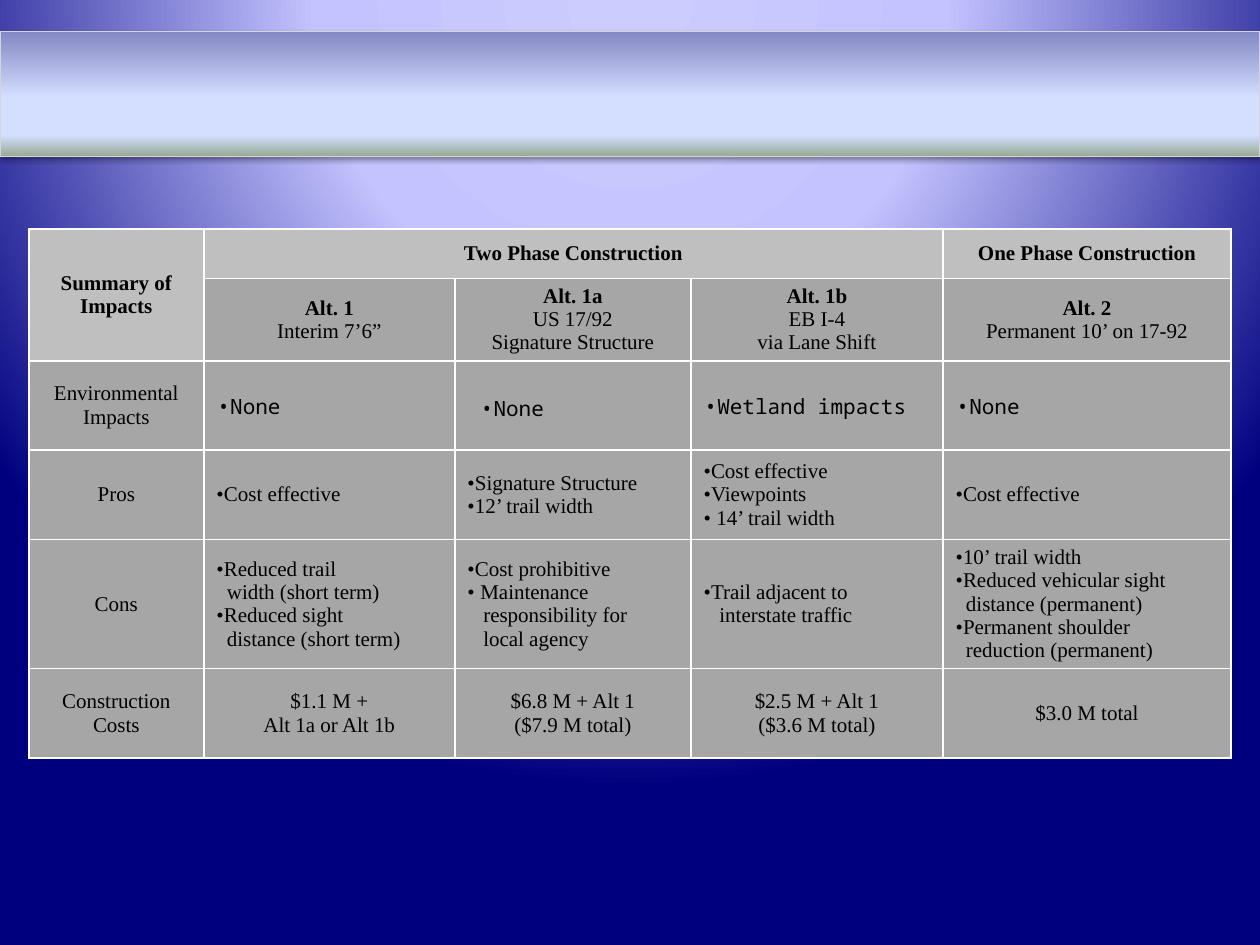
from dataclasses import dataclass
from pptx import Presentation as Deck
from pptx.dml.color import RGBColor as Rgb
from pptx.enum.shapes import MSO_SHAPE as Shape
from pptx.enum.text import MSO_ANCHOR as Anchor, PP_ALIGN as Align
from pptx.oxml import parse_xml as make
from pptx.oxml.ns import nsdecls, qn
from pptx.util import Cm, Pt

NS = nsdecls("a")


@dataclass(frozen=True)
class Theme:
    font: str = "Times New Roman"
    mono: str = "Noto Sans Mono"
    size: int = 12
    ink: str = "000000"
    head: str = "BFBFBF"
    body: str = "A6A6A6"
    grid: str = "FFFFFF"
    edge: str = "D5D5D5"
    back: tuple = ((0, "CCCCFF"), (40, "C3C3FF"), (100, "00007F"))
    band: tuple = ((0, "8488C4"), (53, "D4DEFF"), (83, "D4DEFF"), (100, "96AB94"))


class Page:
    def __init__(self, deck, theme):
        self.theme = theme
        self.slide = deck.slides.add_slide(deck.slide_layouts[6])

    def blend(self, root, stops, tail):
        marks = "".join(
            f'<a:gs pos="{at * 1000}"><a:srgbClr val="{tone}"/></a:gs>'
            for at, tone in stops)
        old = root.find(".//" + qn("a:gradFill"))
        new = make(f'<a:gradFill {NS} rotWithShape="1">'
                   f'<a:gsLst>{marks}</a:gsLst>{tail}</a:gradFill>')
        old.getparent().replace(old, new)

    def back(self):
        self.slide.background.fill.gradient()
        self.blend(self.slide.element, self.theme.back,
                   '<a:path path="circle"><a:fillToRect l="50000" t="-80000" '
                   'r="50000" b="180000"/></a:path>')

    def band(self, left, top, width, height):
        bar = self.slide.shapes.add_shape(
            Shape.RECTANGLE, Cm(left), Cm(top), Cm(width), Cm(height))
        bar.fill.gradient()
        self.blend(bar.element, self.theme.band,
                   '<a:lin ang="5400000" scaled="0"/>')
        bar.line.color.rgb = Rgb.from_string(self.theme.edge)
        bar.line.width = Pt(0.75)
        bar.shadow.inherit = False
        bar.element.spPr.find(qn("a:effectLst")).append(make(
            f'<a:outerShdw {NS} blurRad="{Pt(3.1)}" dist="{Pt(1.6)}" '
            'dir="5400000" rotWithShape="0"><a:srgbClr val="000000">'
            '<a:alpha val="38000"/></a:srgbClr></a:outerShdw>'))

    def indent(self, para, left, hang=0):
        props = para._p.get_or_add_pPr()
        props.set("marL", str(Cm(left)))
        props.set("indent", str(-Cm(hang)))
        return props

    def bullet(self, para, left, hang, font):
        props = self.indent(para, left, hang)
        props.append(make(f'<a:buFont {NS} typeface="{font}"/>'))
        props.append(make(f'<a:buChar {NS} char="•"/>'))

    def style(self, para, font, bold=False):
        for run in para.runs:
            run.font.name = font
            run.font.size = Pt(self.theme.size)
            run.font.bold = bold
            run.font.color.rgb = Rgb.from_string(self.theme.ink)

    def paint(self, cell, tone):
        cell.fill.solid()
        cell.fill.fore_color.rgb = Rgb.from_string(tone)
        props = cell._tc.get_or_add_tcPr()
        for spot, side in enumerate("LRTB"):
            props.insert(spot, make(
                f'<a:ln{side} {NS} w="{Pt(1)}"><a:solidFill>'
                f'<a:srgbClr val="{self.theme.grid}"/></a:solidFill></a:ln{side}>'))

    def label(self, cell, text, bold, pad, mono):
        cell.vertical_anchor = Anchor.MIDDLE
        cell.text_frame.text = text
        font = self.theme.mono if mono else self.theme.font
        listed = text.startswith("•")
        if mono:
            cell.margin_left = cell.margin_right = cell.margin_top = Cm(0.03)
            cell.margin_bottom = 0
        for spot, para in enumerate(cell.text_frame.paragraphs):
            line = para.text
            if line.startswith("•"):
                para.text = line[1:].strip()
                hang = 0.26 if mono or line.startswith("• ") else 0.15
                self.bullet(para, pad if mono else hang, hang, font)
            elif listed:
                self.indent(para, pad)
            else:
                para.alignment = Align.CENTER
            self.style(para, font, bold and spot == 0)

    def table(self, left, top, cols, rows, data, pads, insets):
        grid = self.slide.shapes.add_table(
            len(rows), len(cols), Cm(left), Cm(top),
            Cm(sum(cols)), Cm(sum(rows))).table
        grid.first_row = grid.horz_banding = False
        for col, width in zip(grid.columns, cols):
            col.width = Cm(width)
        for row, height in zip(grid.rows, rows):
            row.height = Cm(height)
        grid.cell(0, 0).merge(grid.cell(1, 0))
        grid.cell(0, 1).merge(grid.cell(0, 3))
        for y, line in enumerate(data):
            mono = y == 2
            for x, text in enumerate(line):
                cell = grid.cell(y, x)
                top_tone = y == 0 or cell.is_spanned
                self.paint(cell, self.theme.head if top_tone else self.theme.body)
                if text:
                    plain = mono and x > 0
                    pad = (insets if plain else pads)[x]
                    self.label(cell, text, y < 2, pad, plain)
        return grid


COLS = [3.53, 5.06, 4.76, 5.08, 5.81]
ROWS = [0.99, 1.27] + [1.8] * 4
PADS = [0, 0.21, 0.32, 0.32, 0.21]
INSETS = [0, 0.5, 0.75, 0.5, 0.5]
DATA = [
    ["Summary of Impacts", "Two Phase Construction", "", "",
     "One Phase Construction"],
    ["", "Alt. 1\nInterim 7’6”", "Alt. 1a\nUS 17/92\nSignature Structure",
     "Alt. 1b\nEB I-4\nvia Lane Shift", "Alt. 2\nPermanent 10’ on 17-92"],
    ["Environmental Impacts", "•None", "•None", "•Wetland impacts", "•None"],
    ["Pros", "•Cost effective", "•Signature Structure\n•12’ trail width",
     "•Cost effective\n•Viewpoints\n• 14’ trail width", "•Cost effective"],
    ["Cons",
     "•Reduced trail\nwidth (short term)\n•Reduced sight\ndistance (short term)",
     "•Cost prohibitive\n• Maintenance\nresponsibility for\nlocal agency",
     "•Trail adjacent to\ninterstate traffic",
     "•10’ trail width\n•Reduced vehicular sight\ndistance (permanent)\n"
     "•Permanent shoulder\nreduction (permanent)"],
    ["Construction Costs", "$1.1 M +\nAlt 1a or Alt 1b",
     "$6.8 M + Alt 1\n($7.9 M total)", "$2.5 M + Alt 1\n($3.6 M total)",
     "$3.0 M total"],
]

deck = Deck()
deck.slide_width, deck.slide_height = Cm(25.4), Cm(19.05)
page = Page(deck, Theme())
page.back()
page.band(0, 0.64, 25.4, 2.51)
grid = page.table(0.58, 4.62, COLS, ROWS, DATA, PADS, INSETS)
loose = grid.cell(2, 2).text_frame.paragraphs[0]
loose.line_spacing = 1.15
loose.space_after = Pt(10)
deck.save("out.pptx")
